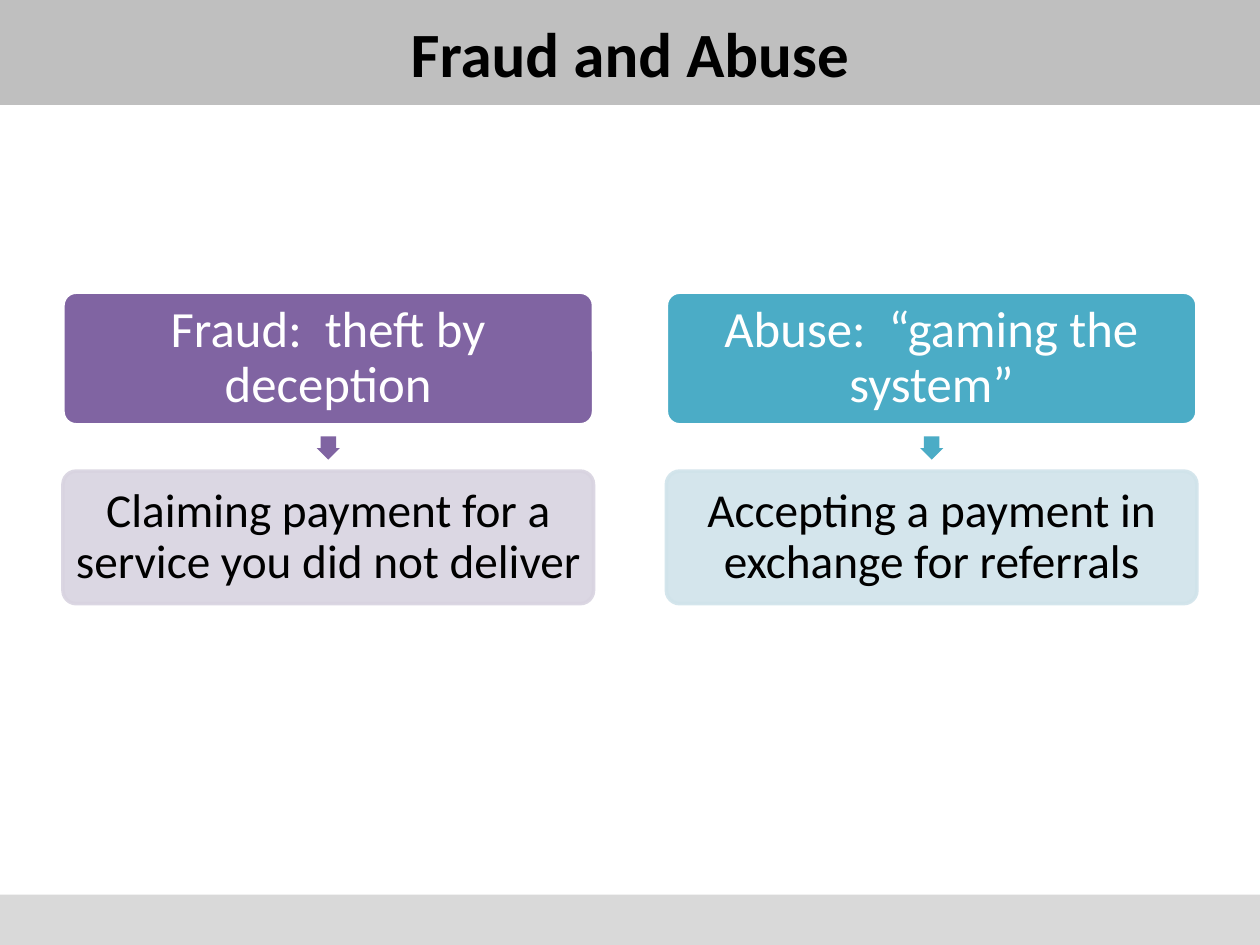
from lxml.etree import SubElement
from pptx import Presentation
from pptx.dml.color import RGBColor
from pptx.enum.shapes import MSO_SHAPE
from pptx.enum.text import MSO_ANCHOR, PP_ALIGN
from pptx.oxml.ns import qn
from pptx.util import Pt

BLACK = RGBColor(0x00, 0x00, 0x00)
WHITE = RGBColor(0xFF, 0xFF, 0xFF)
TITLE_GRAY = RGBColor(0xBF, 0xBF, 0xBF)
FOOTER_GRAY = RGBColor(0xD9, 0xD9, 0xD9)
PURPLE = RGBColor(0x80, 0x64, 0xA2)
PALE_PURPLE = RGBColor(0xD8, 0xD3, 0xE0)
TEAL = RGBColor(0x4B, 0xAC, 0xC6)
PALE_TEAL = RGBColor(0xD0, 0xE3, 0xEA)

TITLE = "Fraud and Abuse"
TOPICS = [
    ("Fraud:  theft by deception",
     "Claiming payment for a service you did not deliver", PURPLE, PALE_PURPLE),
    ("Abuse:  “gaming the system”",
     "Accepting a payment in exchange for referrals", TEAL, PALE_TEAL),
]

SLIDE_W, SLIDE_H = 720, 540
TITLE_H, FOOTER_H = 60, 28.8
MARGIN = 36
BOX_W, BOX_H = 303.2, 75.8
TERM_TOP, EXAMPLE_TOP = 167, 269.2
ARROW_SIZE, ARROW_TOP = 13.26, 249.44
COLUMN_STEP = SLIDE_W - 2 * MARGIN - BOX_W


def add_block(slide, preset, left, top, width, height, fill, line=None):
    block = slide.shapes.add_shape(preset, Pt(left), Pt(top), Pt(width), Pt(height))
    block.shadow.inherit = False
    block.fill.solid()
    block.fill.fore_color.rgb = fill
    if line is None:
        block.line.fill.background()
    else:
        block.line.color.rgb = line
        block.line.width = Pt(2)
    return block


def write(block, text, size, color, bold=False, inset=2.8):
    frame = block.text_frame
    frame.word_wrap = True
    frame.vertical_anchor = MSO_ANCHOR.MIDDLE
    frame.margin_left = frame.margin_right = Pt(inset)
    frame.margin_top = frame.margin_bottom = Pt(inset)
    paragraph = frame.paragraphs[0]
    paragraph.alignment = PP_ALIGN.CENTER
    run = paragraph.add_run()
    run.text = text
    run.font.name = "Calibri"
    run.font.size = Pt(size)
    run.font.bold = bold
    run.font.color.rgb = color
    return paragraph


def add_card(slide, left, top, text, size, color, fill, line):
    card = add_block(slide, MSO_SHAPE.ROUNDED_RECTANGLE, left, top, BOX_W, BOX_H, fill, line)
    card.adjustments[0] = 0.1
    write(card, text, size, color).line_spacing = 0.9
    return card


def make_translucent(card, percent):
    for color in card.element.spPr.iter(qn("a:srgbClr")):
        SubElement(color, qn("a:alpha")).set("val", str(percent * 1000))


def add_topic(slide, left, term, example, strong, pale):
    add_card(slide, left, TERM_TOP, term, 29, WHITE, strong, WHITE)
    arrow = add_block(slide, MSO_SHAPE.RIGHT_ARROW, left + (BOX_W - ARROW_SIZE) / 2,
                      ARROW_TOP, ARROW_SIZE, ARROW_SIZE, strong)
    arrow.rotation = 90
    arrow.adjustments[0] = 0.67
    arrow.adjustments[1] = 0.5
    example_card = add_card(slide, left, EXAMPLE_TOP, example, 27, BLACK, pale, pale)
    make_translucent(example_card, 90)


def main():
    deck = Presentation()
    deck.slide_width, deck.slide_height = Pt(SLIDE_W), Pt(SLIDE_H)
    slide = deck.slides.add_slide(deck.slide_layouts[6])

    title_bar = add_block(slide, MSO_SHAPE.RECTANGLE, 0, 0, SLIDE_W, TITLE_H, TITLE_GRAY)
    write(title_bar, TITLE, 36, BLACK, bold=True, inset=3.6)
    for column, topic in enumerate(TOPICS):
        add_topic(slide, MARGIN + column * COLUMN_STEP, *topic)
    add_block(slide, MSO_SHAPE.RECTANGLE, 0, SLIDE_H - FOOTER_H, SLIDE_W, FOOTER_H, FOOTER_GRAY)

    deck.save("out.pptx")


if __name__ == "__main__":
    main()
